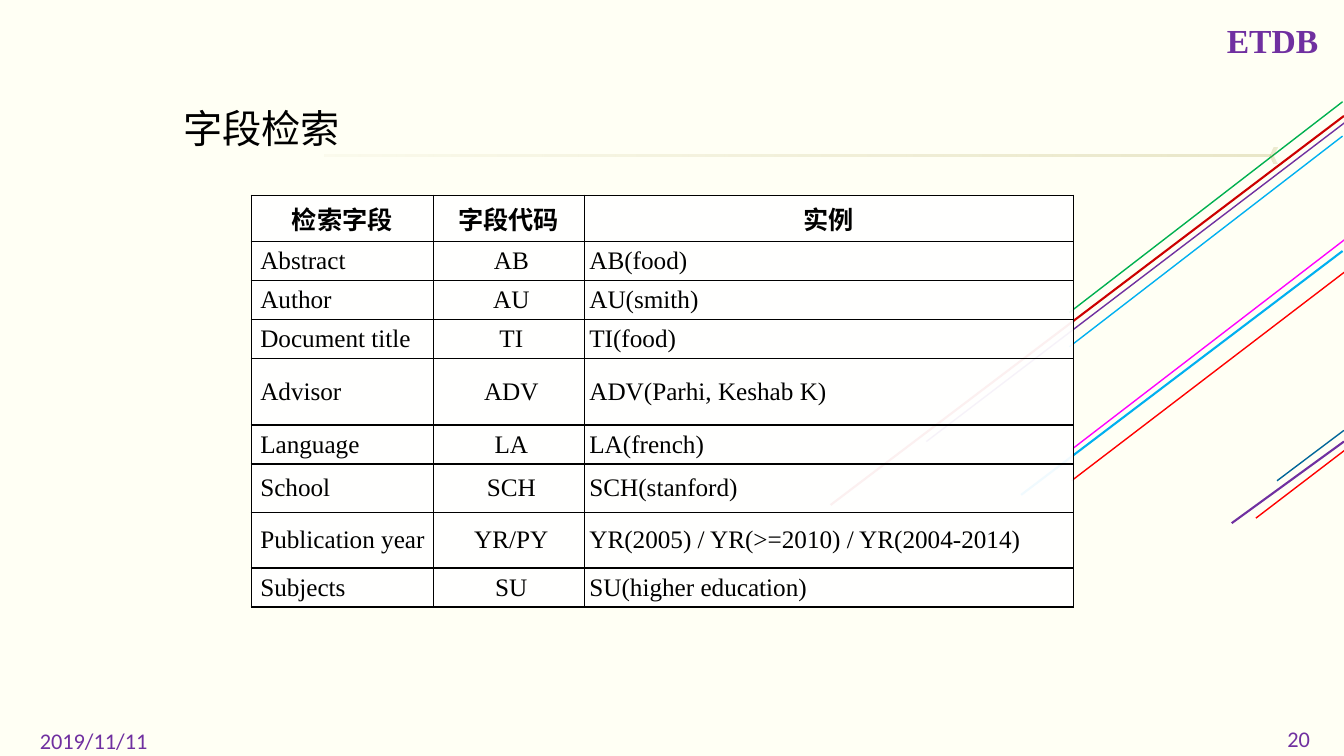
import pptx
import pptx.dml.color
import pptx.enum.shapes
import pptx.enum.text
import pptx.oxml.ns
import pptx.util
from lxml import etree

Pt = pptx.util.Pt
qn = pptx.oxml.ns.qn
ALIGN = pptx.enum.text.PP_ALIGN
MIDDLE = pptx.enum.text.MSO_ANCHOR.MIDDLE
SHAPE = pptx.enum.shapes.MSO_SHAPE


def colour(target, value, alpha=100):
    target.rgb = pptx.dml.color.RGBColor.from_string(value)
    if alpha < 100:
        for node in target._xFill.iter(qn("a:srgbClr")):
            etree.SubElement(node, qn("a:alpha"), val=str(alpha * 1000))


def write(frame, text, size, font, value, align, bold=False):
    frame.word_wrap = True
    para = frame.paragraphs[0]
    para.alignment = align
    span = para.add_run()
    span.text = text
    span.font.size = Pt(size)
    span.font.name = font
    span.font.bold = bold
    colour(span.font.color, value)
    return para


deck = pptx.Presentation()
deck.slide_width, deck.slide_height = Pt(960), Pt(540)
page = deck.slides.add_slide(deck.slide_layouts[6])
page.background.fill.solid()
colour(page.background.fill.fore_color, "FFFFF4")

# Diagonal lines: start, end, colour, width
diagonals = [
    (960, 82.8, 593.3, 360.7, "CC0000", 1.5),
    (961.2, 87.1, 661.7, 315.4, "7030A0", 1),
    (959, 72.7, 763.9, 223.2, "00B050", 1),
    (959, 97.2, 763.9, 247.7, "00B0F0", 1),
    (959, 179.3, 729.4, 353.5, "00B0F0", 1.5),
    (961.2, 170.6, 765.4, 321.1, "FF00FF", 1),
    (961.2, 193.7, 765.4, 343.4, "FF0000", 1),
    (961.2, 321.1, 897.1, 370.1, "FF0000", 1),
    (960, 315.4, 879.8, 373.7, "7030A0", 1.5),
    (960, 307.4, 912.2, 343.4, "006699", 1),
]
for *ends, value, width in diagonals:
    line = page.shapes.add_connector(
        pptx.enum.shapes.MSO_CONNECTOR.STRAIGHT, *[Pt(end) for end in ends])
    colour(line.line.color, value)
    line.line.width = Pt(width)
    etree.SubElement(line._element.spPr, qn("a:effectLst"))

# Fading rule under the heading, with its chevron tip
rule_parts = [
    (SHAPE.CHEVRON, 906.5, 105.1, 5.8, 11.5, 15),
    (SHAPE.RECTANGLE, 231.8, 110.2, 675.4, 1.6, 4),
]
for kind, left, top, width, height, end_alpha in rule_parts:
    part = page.shapes.add_shape(kind, Pt(left), Pt(top), Pt(width), Pt(height))
    part.shadow.inherit = False
    part.line.fill.background()
    part.fill.gradient()
    part.fill.gradient_angle = 180
    for stop, alpha in zip(part.fill.gradient_stops, (20, end_alpha)):
        colour(stop.color, "918415")
        for node in stop._gs.iter(qn("a:srgbClr")):
            etree.SubElement(node, qn("a:alpha"), val=str(alpha * 1000))
    if kind == SHAPE.CHEVRON:
        part._element.spPr.find(qn("a:xfrm")).set("flipH", "1")

# Heading
box = page.shapes.add_textbox(Pt(88.6), Pt(71.3), Pt(848), Pt(396.7))
para = write(box.text_frame, "字段检索", 28, "Times New Roman", "000000", ALIGN.LEFT)
para._p.get_or_add_pPr().set("marL", str(Pt(35.3)))

# Page number, date and database label
labels = [
    ("20", 895.7, 514.8, 64, 25.2, 16, "Calibri", False),
    ("2019/11/11", 0, 516.2, 133.9, 25.2, 16, "Calibri", False),
    ("ETDB", 859.7, 0, 98.6, 56.9, 24, "Times New Roman", True),
]
for text, left, top, width, height, size, font, bold in labels:
    box = page.shapes.add_textbox(Pt(left), Pt(top), Pt(width), Pt(height))
    box.text_frame.vertical_anchor = MIDDLE
    write(box.text_frame, text, size, font, "7030A0", ALIGN.CENTER, bold)

# Table of search fields
rows = [
    (32.9, "检索字段", "字段代码", "实例"),
    (27.9, "Abstract", "AB", "AB(food)"),
    (27.9, "Author", "AU", "AU(smith)"),
    (27.9, "Document title", "TI", "TI(food)"),
    (47.6, "Advisor", "ADV", "ADV(Parhi, Keshab K)"),
    (27.9, "Language", "LA", "LA(french)"),
    (34.4, "School", "SCH", "SCH(stanford)"),
    (39.9, "Publication year", "YR/PY", "YR(2005) / YR(>=2010) / YR(2004-2014)"),
    (27.9, "Subjects", "SU", "SU(higher education)"),
]
columns = [(130.1, ALIGN.JUSTIFY, 2.9), (107.9, ALIGN.CENTER, 3.6), (349.2, ALIGN.JUSTIFY, 0)]
table = page.shapes.add_table(
    len(rows), len(columns), Pt(179.4), Pt(139.4),
    Pt(sum(column[0] for column in columns)), Pt(sum(row[0] for row in rows))).table
table.first_row = table.horz_banding = False
for index, (width, align, indent) in enumerate(columns):
    table.columns[index].width = Pt(width)
for row_index, (height, *texts) in enumerate(rows):
    table.rows[row_index].height = Pt(height)
    header = row_index == 0
    for index, (text, (width, align, indent)) in enumerate(zip(texts, columns)):
        cell = table.cell(row_index, index)
        cell.vertical_anchor = MIDDLE
        cell.margin_left = cell.margin_right = Pt(3.6)
        cell.margin_top = cell.margin_bottom = Pt(2.2)
        para = write(cell.text_frame, text, 18, "Times New Roman", "000000",
                     ALIGN.CENTER if header else align, header)
        if indent and not header:
            para._p.get_or_add_pPr().set("indent", str(Pt(indent)))
        properties = cell._tc.get_or_add_tcPr()
        for side in ("lnL", "lnR", "lnT", "lnB"):
            border = etree.SubElement(properties, qn("a:" + side), w=str(Pt(1)))
            ink = etree.SubElement(border, qn("a:solidFill"))
            etree.SubElement(ink, qn("a:srgbClr"), val="000000")
        cell.fill.solid()
        colour(cell.fill.fore_color, "FFFFFF", 94)

deck.save("out.pptx")
